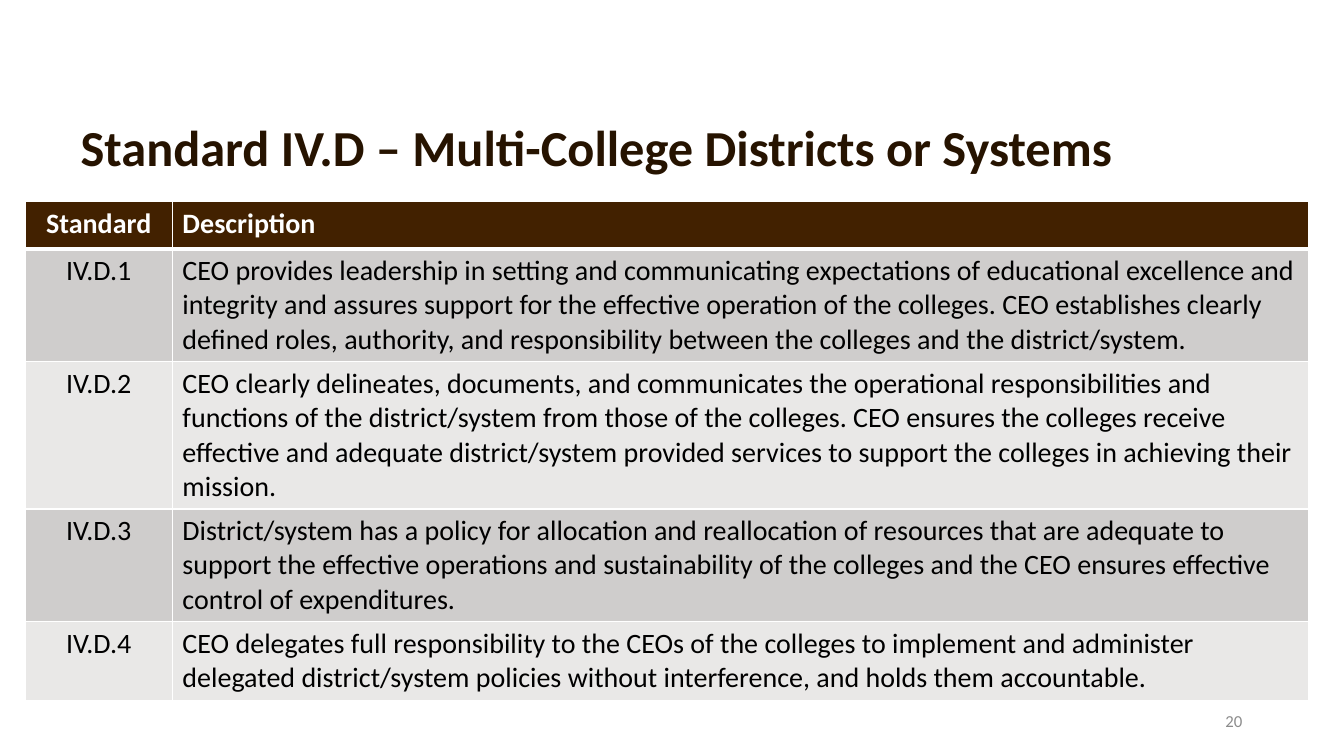
from dataclasses import dataclass

from lxml import etree
from pptx import Presentation
from pptx import util as u
from pptx.dml.color import RGBColor
from pptx.enum import text
from pptx.oxml import ns

FONT = "Calibri"
WHITE, BLACK = "FFFFFF", "000000"
HEADER_FILL = "422100"
BAND_FILLS = ("CFCDCC", "E9E8E7")
COLUMN_WIDTHS = (1.46, 11.27)


@dataclass
class StandardRow:
    standard: str
    description: str
    height: float


HEADER = StandardRow("Standard", "Description", 0.47)
STANDARDS = [
    StandardRow("IV.D.1", "CEO provides leadership in setting and communicating expectations of "
                "educational excellence and integrity and assures support for the effective "
                "operation of the colleges. CEO establishes clearly defined roles, authority, "
                "and responsibility between the colleges and the district/system.", 1.12),
    StandardRow("IV.D.2", "CEO clearly delineates, documents, and communicates the operational "
                "responsibilities and functions of the district/system from those of the "
                "colleges. CEO ensures the colleges receive effective and adequate "
                "district/system provided services to support the colleges in achieving "
                "their mission.", 1.46),
    StandardRow("IV.D.3", "District/system has a policy for allocation and reallocation of "
                "resources that are adequate to support the effective operations and "
                "sustainability of the colleges and the CEO ensures effective control of "
                "expenditures.", 1.12),
    StandardRow("IV.D.4", "CEO delegates full responsibility to the CEOs of the colleges to "
                "implement and administer delegated district/system policies without "
                "interference, and holds them accountable.", 0.78),
]


def color(hex_value: str) -> RGBColor:
    return RGBColor.from_string(hex_value)


def write(tf, words: str, size: float, hex_value: str, bold: bool = False,
          align=text.PP_ALIGN.LEFT):
    """Put one formatted paragraph into a text frame and return it."""
    p = tf.paragraphs[0]
    p.alignment = align
    r = p.add_run()
    r.text = words
    for name, value in {"name": FONT, "size": u.Pt(size), "bold": bold}.items():
        setattr(r.font, name, value)
    r.font.color.rgb = color(hex_value)
    return p


def add_borders(cell, bottom: float, top: float) -> None:
    tc_pr = cell._tc.get_or_add_tcPr()
    widths = {"lnL": 1, "lnR": 1, "lnT": top, "lnB": bottom}
    for index, (side, width) in enumerate(widths.items()):
        ln = etree.Element(ns.qn(f"a:{side}"), w=str(u.Pt(width)))
        fill = etree.SubElement(ln, ns.qn("a:solidFill"))
        etree.SubElement(fill, ns.qn("a:srgbClr"), val=WHITE)
        tc_pr.insert(index, ln)


def add_standards_table(s) -> None:
    rows = [HEADER, *STANDARDS]
    table = s.shapes.add_table(
        len(rows), len(COLUMN_WIDTHS), u.Inches(0.25), u.Inches(2),
        u.Inches(sum(COLUMN_WIDTHS)), u.Inches(sum(row.height for row in rows))).table
    table.horz_banding = False
    for column, width in zip(table.columns, COLUMN_WIDTHS):
        column.width = u.Inches(width)

    for i, row in enumerate(rows):
        table.rows[i].height = u.Inches(row.height)
        is_header = i == 0
        fill = HEADER_FILL if is_header else BAND_FILLS[(i - 1) % 2]
        aligned = ((row.standard, text.PP_ALIGN.CENTER),
                   (row.description, text.PP_ALIGN.LEFT))
        for cell, (words, align) in zip(table.rows[i].cells, aligned):
            cell.fill.solid()
            cell.fill.fore_color.rgb = color(fill)
            write(cell.text_frame, words, 20, WHITE if is_header else BLACK, is_header, align)
            add_borders(cell, bottom=3 if is_header else 1, top=3 if i == 1 else 1)


def main() -> None:
    prs = Presentation()
    prs.slide_width, prs.slide_height = u.Inches(13.33), u.Inches(7.5)
    s = prs.slides.add_slide(prs.slide_layouts[5])

    # Title
    title = s.shapes.title
    title.left, title.top = u.Inches(0.7), u.Inches(0.99)
    title.width, title.height = u.Inches(12.1), u.Inches(1)
    title.text_frame.vertical_anchor = text.MSO_ANCHOR.MIDDLE
    p = write(title.text_frame, "Standard IV.D – Multi-College Districts or Systems",
              36, "261300", bold=True)
    p.line_spacing = 0.9

    # Slide number
    number = s.shapes.add_textbox(u.Inches(9.42), u.Inches(6.95), u.Inches(3), u.Inches(0.4))
    tf = number.text_frame
    tf.word_wrap = True
    tf.vertical_anchor = text.MSO_ANCHOR.MIDDLE
    write(tf, "20", 12, "8C8C8C", align=text.PP_ALIGN.RIGHT)

    # Standards and their descriptions
    add_standards_table(s)

    prs.save("out.pptx")


if __name__ == "__main__":
    main()
